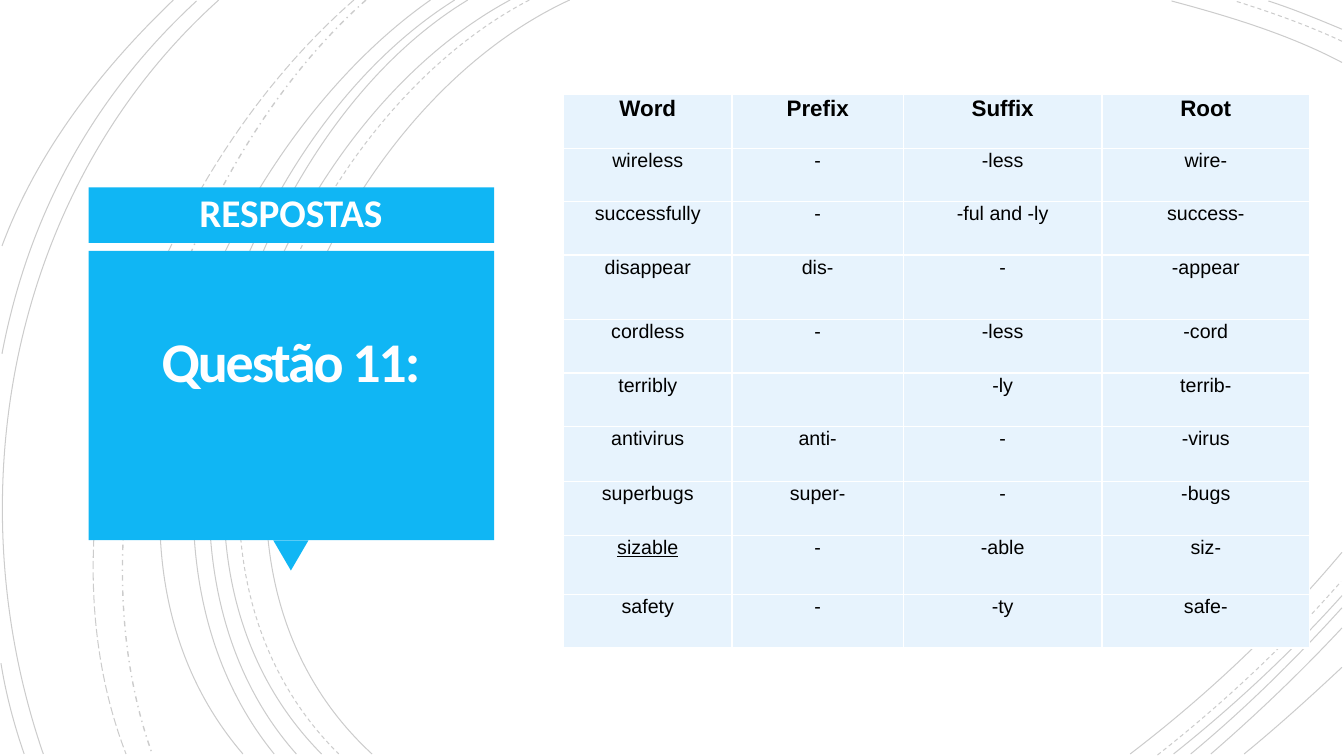
from lxml import etree
from pptx import Presentation
from pptx.dml.color import RGBColor
from pptx.enum.dml import MSO_LINE
from pptx.enum.shapes import MSO_SHAPE
from pptx.enum.text import MSO_ANCHOR, PP_ALIGN
from pptx.oxml.ns import qn
from pptx.util import Emu, Pt

PX = 9144
SOLID, DASH = MSO_LINE.SOLID, MSO_LINE.DASH
DASH_DOT, LONG_DASH = MSO_LINE.DASH_DOT, MSO_LINE.LONG_DASH
RECTANGLE, TRIANGLE = MSO_SHAPE.RECTANGLE, MSO_SHAPE.ISOSCELES_TRIANGLE
TOP, MIDDLE, CENTER = MSO_ANCHOR.TOP, MSO_ANCHOR.MIDDLE, PP_ALIGN.CENTER

BLUE, PALE_BLUE = "10B6F4", "E7F3FD"
WHITE, TITLE_WHITE, BLACK = "FFFFFF", "FFFEFF", "000000"

ARCS = [
    (SOLID, (565, 0), (315, 115), (143, 540), (369, 748)),
    (SOLID, (1331, 62), (1278, 34), (1218, 16), (1162, 1)),
    (SOLID, (1121, 748), (1197, 690), (1269, 622), (1331, 548)),
    (DASH, (525, 0), (285, 125), (123, 537), (336, 748)),
    (DASH, (1331, 41), (1297, 25), (1260, 12), (1225, 1)),
    (DASH, (1148, 749), (1213, 698), (1275, 640), (1330, 577)),
    (SOLID, (506, 0), (270, 127), (110, 537), (319, 748)),
    (SOLID, (1331, 29), (1307, 19), (1283, 9), (1258, 1)),
    (SOLID, (1164, 748), (1223, 701), (1280, 648), (1331, 591)),
    (SOLID, (464, 0), (244, 133), (110, 541), (294, 748)),
    (SOLID, (1181, 748), (1234, 704), (1284, 655), (1331, 603)),
    (SOLID, (451, 0), (231, 138), (97, 533), (272, 748)),
    (SOLID, (1201, 748), (1246, 709), (1290, 667), (1331, 623)),
    (SOLID, (427, 0), (217, 147), (53, 529), (241, 748)),
    (SOLID, (1234, 748), (1267, 721), (1299, 692), (1331, 662)),
    (DASH_DOT, (363, 0), (176, 166), (65, 509), (151, 748)),
    (LONG_DASH, (351, 0), (157, 169), (29, 499), (125, 748)),
    (SOLID, (217, 0), (11, 185), (-46, 490), (43, 748)),
    (SOLID, (195, 1), (92, 96), (28, 214), (2, 351)),
    (SOLID, (1, 658), (6, 689), (14, 719), (24, 748)),
    (SOLID, (172, 0), (100, 69), (37, 150), (2, 244)),
]

COLUMN_WIDTHS = [167, 170, 197, 206]
ROW_HEIGHTS = [53, 53, 53, 64, 53, 53, 55, 53, 59, 53]
WORDS = [
    ("Word", "Prefix", "Suffix", "Root"),
    ("wireless", "-", "-less", "wire-"),
    ("successfully", "-", "-ful and -ly", "success-"),
    ("disappear", "dis-", "-", "-appear"),
    ("cordless", "-", "-less", "-cord"),
    ("terribly", "", "-ly", "terrib-"),
    ("antivirus", "anti-", "-", "-virus"),
    ("superbugs", "super-", "-", "-bugs"),
    ("sizable", "-", "-able", "siz-"),
    ("safety", "-", "-ty", "safe-"),
]
UNDERLINED = "sizable"


def px(length):
    return Emu(length * PX)


def color(value):
    return RGBColor.from_string(value)


def write(paragraph, text, font_name, size, text_color, bold):
    paragraph.text = text
    paragraph.alignment = CENTER
    font = paragraph.font
    font.name, font.size, font.bold = font_name, Pt(size), bold
    font.color.rgb = color(text_color)


def add_block(slide, preset, left, top, width, height):
    shape = slide.shapes.add_shape(preset, px(left), px(top), px(width), px(height))
    shape.shadow.inherit = False
    shape.fill.solid()
    shape.fill.fore_color.rgb = color(BLUE)
    shape.line.fill.background()
    return shape


def add_label(slide, left, top, width, height, text, size, text_color, anchor):
    box = slide.shapes.add_textbox(px(left), px(top), px(width), px(height))
    frame = box.text_frame
    frame.word_wrap = True
    frame.vertical_anchor = anchor
    write(frame.paragraphs[0], text, "Calibri", size, text_color, True)
    return frame


def add_arc(slide, left, top, dash, points):
    start, *rest = [(left + x, top + y) for x, y in points]
    builder = slide.shapes.build_freeform(*start, scale=PX)
    builder.add_line_segments(rest, close=False)
    shape = builder.convert_to_shape()
    shape.shadow.inherit = False
    shape.fill.background()

    segments = list(shape._element.iter(qn("a:lnTo")))
    curve = etree.SubElement(segments[0].getparent(), qn("a:cubicBezTo"))
    for segment in segments:
        curve.append(segment[0])
        segment.getparent().remove(segment)

    line = shape.line
    line.width = Pt(1 if dash == DASH_DOT else 0.75)
    line.color.rgb = color(BLACK)
    line.dash_style = dash
    for line_color in line._ln.iter(qn("a:srgbClr")):
        etree.SubElement(line_color, qn("a:alpha"), val="20000")


def add_background_arcs(slide, left, top):
    for dash, *points in ARCS:
        add_arc(slide, left, top, dash, points)


def add_title_panel(slide, left, top, width):
    add_block(slide, RECTANGLE, left, top, width, 55)
    pointer = add_block(slide, TRIANGLE, left + (width - 35) // 2, top + 350, 35, 30)
    pointer.rotation = 180
    add_block(slide, RECTANGLE, left, top + 63, width, 287)

    title = add_label(slide, left + 9, top + 71, width - 19, 269,
                      "Questão 11:", 40, TITLE_WHITE, MIDDLE)
    title.margin_left = title.margin_right = title.margin_top = px(25)
    title.margin_bottom = px(83)
    paragraph = title.paragraphs[0]
    paragraph.line_spacing = 0.85
    paragraph.runs[0]._r.get_or_add_rPr().set("spc", "-150")

    add_label(slide, left + 93, top - 4, 215, 57, "RESPOSTAS", 28, WHITE, TOP)


def add_cell_borders(cell):
    properties = cell._tc.get_or_add_tcPr()
    for side in ("a:lnL", "a:lnR", "a:lnT", "a:lnB"):
        border = etree.SubElement(properties, qn(side), w=str(Pt(1)))
        fill = etree.SubElement(border, qn("a:solidFill"))
        etree.SubElement(fill, qn("a:srgbClr"), val=WHITE)


def fill_cell(cell, text, is_header):
    add_cell_borders(cell)
    cell.fill.solid()
    cell.fill.fore_color.rgb = color(PALE_BLUE)
    cell.margin_left = cell.margin_right = px(5)
    cell.margin_top = cell.margin_bottom = 0
    paragraph = cell.text_frame.paragraphs[0]
    write(paragraph, text, "Arial", 16 if is_header else 14, BLACK, is_header)
    paragraph.line_spacing = 1.06
    if text == UNDERLINED:
        paragraph.font.underline = True
        paragraph.runs[0].font.underline = True


def add_word_table(slide, left, top):
    frame = slide.shapes.add_table(
        len(WORDS), len(COLUMN_WIDTHS), px(left), px(top),
        px(sum(COLUMN_WIDTHS)), px(sum(ROW_HEIGHTS)))
    table = frame.table
    for column, width in zip(table.columns, COLUMN_WIDTHS):
        column.width = px(width)
    for row_index, (row, height) in enumerate(zip(table.rows, ROW_HEIGHTS)):
        row.height = px(height)
        for cell, text in zip(row.cells, WORDS[row_index]):
            fill_cell(cell, text, row_index == 0)


def main():
    presentation = Presentation()
    presentation.slide_width, presentation.slide_height = px(1333), px(750)
    slide = presentation.slides.add_slide(presentation.slide_layouts[6])
    add_background_arcs(slide, 0, 0)
    add_title_panel(slide, 88, 186, 402)
    add_word_table(slide, 559, 94)
    presentation.save("out.pptx")


if __name__ == "__main__":
    main()
